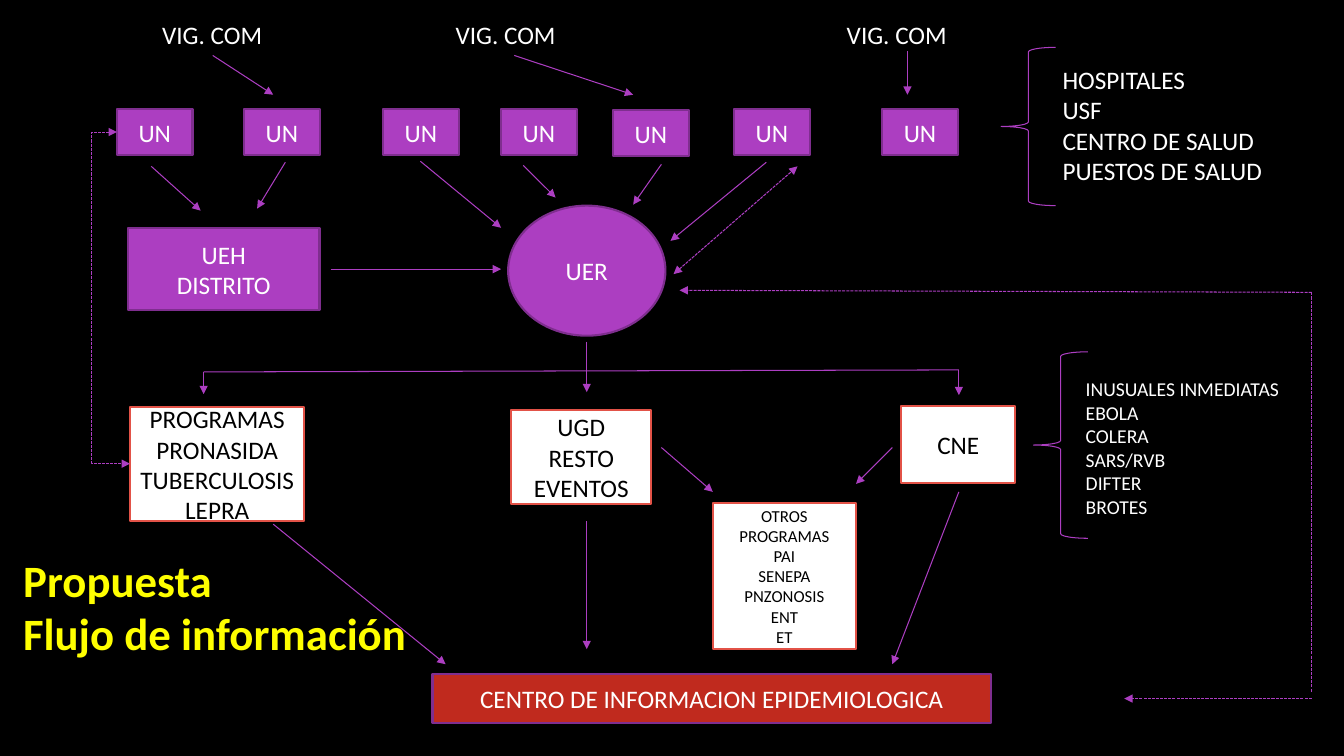
import pptx
import pptx.util
import pptx.dml.color
import pptx.enum.dml
import pptx.enum.shapes
import pptx.enum.text
import pptx.oxml

RGB = pptx.dml.color.RGBColor
KIND = pptx.enum.shapes.MSO_SHAPE
LINK = pptx.enum.shapes.MSO_CONNECTOR
ALIGN = pptx.enum.text.PP_ALIGN
ANCHOR = pptx.enum.text.MSO_ANCHOR
DASH = pptx.enum.dml.MSO_LINE.SQUARE_DOT
PX = 9144  # 100 px to the inch

BLACK = RGB(0x00, 0x00, 0x00)
WHITE = RGB(0xFF, 0xFF, 0xFF)
YELLOW = RGB(0xFF, 0xFF, 0x00)
PURPLE = RGB(0xAC, 0x3E, 0xC1)
PLUM = RGB(0x7F, 0x2E, 0x8F)
CORAL = RGB(0xE2, 0x52, 0x47)
RED = RGB(0xC0, 0x2A, 0x1E)

deck = pptx.Presentation()
deck.slide_width = 1333 * PX
deck.slide_height = 750 * PX
slide = deck.slides.add_slide(deck.slide_layouts[5])
slide.background.fill.solid()
slide.background.fill.fore_color.rgb = BLACK


def write(shape, text, size, color, centred=False, bold=False):
    frame = shape.text_frame
    frame.text = text
    form = {
        "word_wrap": True,
        "auto_size": pptx.enum.text.MSO_AUTO_SIZE.NONE,
        "vertical_anchor": ANCHOR.MIDDLE if centred else ANCHOR.TOP,
        "margin_left": (5 if centred else 10) * PX,
        "margin_right": (5 if centred else 0) * PX,
        "margin_top": 5 * PX,
        "margin_bottom": 5 * PX,
    }
    for key, value in form.items():
        setattr(frame, key, value)
    font = {"name": "Calibri", "size": pptx.util.Pt(size), "bold": bold}
    for para in frame.paragraphs:
        para.alignment = ALIGN.CENTER if centred else ALIGN.LEFT
        para.font.color.rgb = color
        for key, value in font.items():
            setattr(para.font, key, value)


def join(ends, kind=LINK.STRAIGHT, dash=None, tips=("tailEnd",)):
    """Draw a purple connector; tips lists its arrowheads, headEnd first."""
    wire = slide.shapes.add_connector(kind, *(n * PX for n in ends))
    wire.line.color.rgb = PURPLE
    wire.line.width = pptx.util.Pt(0.75)
    wire.line.dash_style = dash
    space = pptx.oxml.ns.nsdecls("a")
    line = wire.line._get_or_add_ln()
    for tip in tips:
        line.append(pptx.oxml.parse_xml(f'<a:{tip} {space} type="triangle"/>'))
    wire._element.spPr.append(pptx.oxml.parse_xml(f"<a:effectLst {space}/>"))
    return wire


# Title
title = slide.shapes.title
place = {"left": 13, "top": 543, "width": 404, "height": 118}
for key, value in place.items():
    setattr(title, key, value * PX)
write(title, "Propuesta\nFlujo de información", 32, YELLOW, bold=True)

# Free labels and lists
labels = [((x, 14, 120, 40), 18, "VIG. COM") for x in (151, 442, 830)]
labels += [
    ((1044, 59, 260, 131), 18,
     "HOSPITALES\nUSF\nCENTRO DE SALUD\nPUESTOS DE SALUD"),
    ((1067, 369, 254, 151), 14,
     "INUSUALES INMEDIATAS\nEBOLA\nCOLERA\nSARS/RVB\nDIFTER\nBROTES"),
]
for area, size, text in labels:
    box = slide.shapes.add_textbox(*(n * PX for n in area))
    write(box, text, size, WHITE)

# Units, offices and programmes: fill, line, text colour
unit = (PURPLE, PLUM, WHITE)
card = (WHITE, CORAL, BLACK)
bar = (RED, PLUM, WHITE)
nodes = [(KIND.RECTANGLE, (x, 109 if x == 608 else 108, 75, 46), unit, 18, "UN")
         for x in (116, 242, 380, 497, 608, 728, 875)]
nodes += [
    (KIND.RECTANGLE, (127, 226, 190, 82), unit, 18, "UEH\nDISTRITO"),
    (KIND.OVAL, (504, 204, 156, 129), unit, 18, "UER"),
    (KIND.RECTANGLE, (129, 404, 173, 113), card, 18,
     "PROGRAMAS\nPRONASIDA\nTUBERCULOSIS\nLEPRA"),
    (KIND.RECTANGLE, (507, 407, 139, 93), card, 18, "UGD\nRESTO\nEVENTOS"),
    (KIND.RECTANGLE, (894, 403, 113, 76), card, 18, "CNE"),
    (KIND.RECTANGLE, (707, 499, 142, 145), card, 12,
     "OTROS\nPROGRAMAS\nPAI\nSENEPA\nPNZONOSIS\nENT\nET"),
    (KIND.RECTANGLE, (429, 669, 554, 48), bar, 18,
     "CENTRO DE INFORMACION EPIDEMIOLOGICA"),
]
for kind, area, (fill, edge, ink), size, text in nodes:
    node = slide.shapes.add_shape(kind, *(n * PX for n in area))
    node.shadow.inherit = False
    node.fill.solid()
    node.fill.fore_color.rgb = fill
    node.line.color.rgb = edge
    node.line.width = pptx.util.Pt(1.5)
    write(node, text, size, ink, centred=True)

# Braces beside the lists
for area in ((993, 47, 54, 157), (1025, 349, 54, 185)):
    brace = slide.shapes.add_shape(KIND.LEFT_BRACE, *(n * PX for n in area))
    brace.shadow.inherit = False
    brace.fill.background()
    brace.line.color.rgb = PURPLE
    brace.line.width = pptx.util.Pt(0.75)

# Solid arrows, from the community level down to the centre
arrows = [
    (211, 55, 271, 94), (510, 55, 628, 94), (900, 51, 900, 94),
    (150, 165, 199, 209), (283, 161, 255, 207),
    (417, 160, 497, 226), (519, 164, 551, 196),
    (656, 163, 628, 203), (760, 161, 665, 239),
    (328, 267, 497, 267),
    (202, 369, 202, 391), (582, 339, 582, 389), (951, 367, 951, 392),
    (656, 444, 707, 488), (885, 444, 849, 480),
    (271, 520, 442, 659), (582, 517, 582, 644), (951, 488, 885, 659),
]
for ends in arrows:
    join(ends)
join((202, 369, 951, 367), tips=())

# Dashed feedback
both = ("headEnd", "tailEnd")
join((668, 272, 791, 165), dash=DASH, tips=both)
join((1301, 290, 674, 288), dash=DASH)
join((1301, 290, 1301, 687), dash=DASH, tips=())
join((1301, 693, 1115, 693), dash=DASH)
loop = join((116, 131, 129, 460), LINK.ELBOW, DASH, both)
bend = round(-25 / 13 * 100000)  # the loop runs 25 px left of its start
guides = loop._element.spPr.prstGeom.get_or_add_avLst()
guides.append(pptx.oxml.parse_xml(
    f'<a:gd {pptx.oxml.ns.nsdecls("a")} name="adj1" fmla="val {bend}"/>'))

deck.save("out.pptx")
